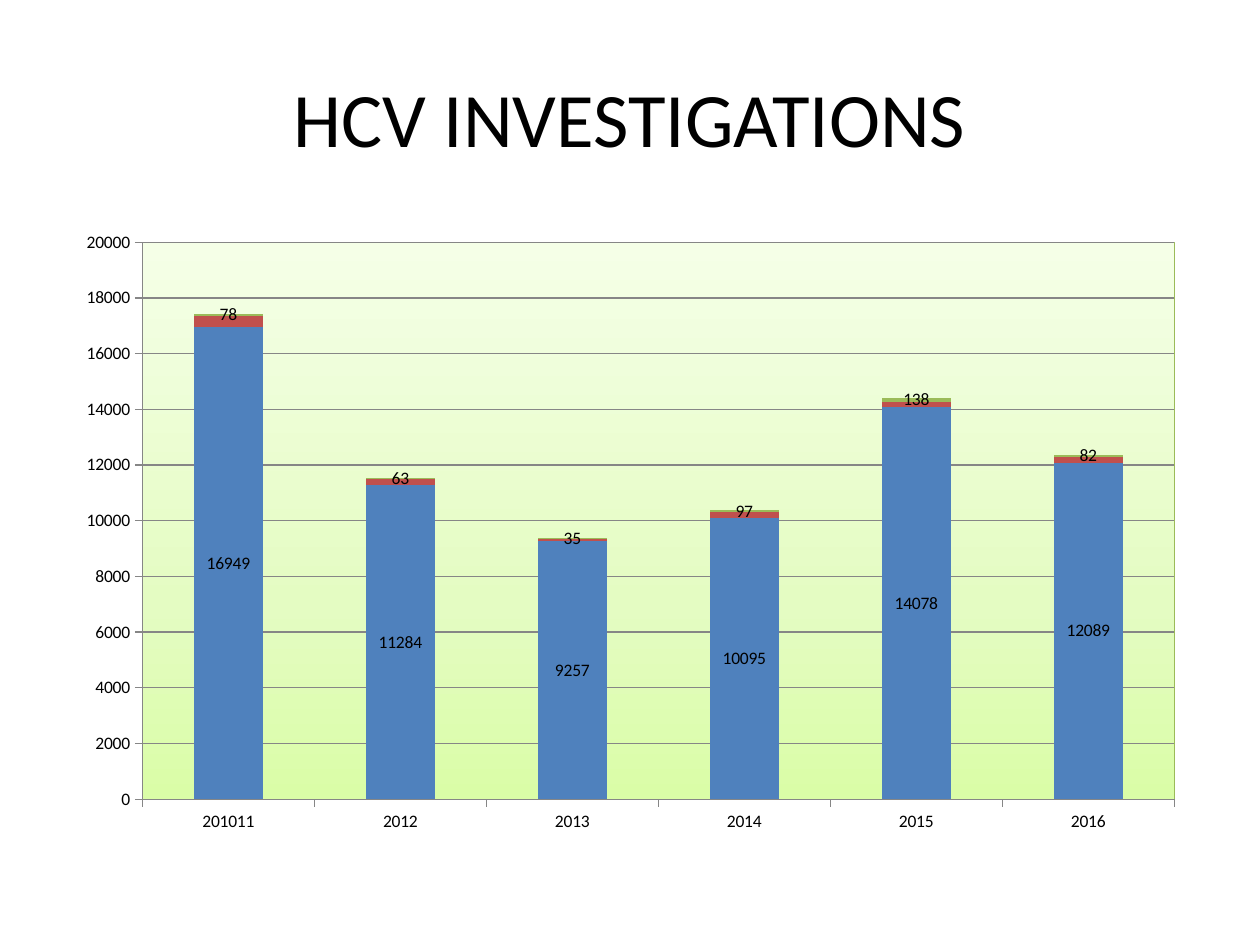
import pptx
import pptx.chart.data
import pptx.dml.color
import pptx.enum.chart
import pptx.enum.text
import pptx.oxml
import pptx.oxml.ns
import pptx.util

Inches = pptx.util.Inches
Pt = pptx.util.Pt
FONT = "Calibri"
COLORS = {"text": "000000", "axis": "868686", "plot_line": "9BBB59"}
TITLE = "HCV INVESTIGATIONS"
YEARS = ["201011", "2012", "2013", "2014", "2015", "2016"]
SERIES = [
    ("Series 1", [16949, 11284, 9257, 10095, 14078, 12089], "4F81BD", True),
    ("Series 2", [400, 200, 100, 200, 200, 200], "C0504D", False),
    ("Series 3", [78, 63, 35, 97, 138, 82], "9BBB59", True),
]
PLOT_GRADIENT = [(0, "DAFDA7"), (35, "E4FCC2"), (100, "F5FFE7")]
PLOT_LAYOUT = {"x": 0.07, "y": 0.035, "w": 0.91, "h": 0.893}


def rgb(value):
    return pptx.dml.color.RGBColor.from_string(value)


def style_font(font, size):
    font.name = FONT
    font.size = Pt(size)
    font.color.rgb = rgb(COLORS["text"])


def style_line(line):
    line.color.rgb = rgb(COLORS["axis"])
    line.width = Pt(0.75)


def add_title(s):
    title = s.shapes.title
    title.left, title.top = Inches(0.5), Inches(0.3)
    title.width, title.height = Inches(9), Inches(1.25)
    tf = title.text_frame
    tf.vertical_anchor = pptx.enum.text.MSO_ANCHOR.MIDDLE
    p = tf.paragraphs[0]
    p.alignment = pptx.enum.text.PP_ALIGN.CENTER
    r = p.add_run()
    r.text = TITLE
    style_font(r.font, 44)


def style_plot_area(chart):
    qn = pptx.oxml.ns.qn
    ns = pptx.oxml.ns.nsdecls("c", "a")
    area = chart.plots[0]._element.getparent()
    for old in area.findall(qn("c:layout")):
        area.remove(old)
    edges = "".join(f'<c:{k} val="{v}"/>' for k, v in PLOT_LAYOUT.items())
    area.insert(0, pptx.oxml.parse_xml(
        f'<c:layout {ns}><c:manualLayout><c:layoutTarget val="inner"/>'
        f'<c:xMode val="edge"/><c:yMode val="edge"/>{edges}'
        '</c:manualLayout></c:layout>'))
    stops = "".join(
        f'<a:gs pos="{pos * 1000}"><a:srgbClr val="{color}"/></a:gs>'
        for pos, color in PLOT_GRADIENT)
    area.append(pptx.oxml.parse_xml(
        f'<c:spPr {ns}><a:gradFill><a:gsLst>{stops}</a:gsLst>'
        '<a:lin ang="16200000" scaled="1"/></a:gradFill><a:ln w="9525">'
        f'<a:solidFill><a:srgbClr val="{COLORS["plot_line"]}"/></a:solidFill>'
        '</a:ln></c:spPr>'))


def add_chart(s):
    data = pptx.chart.data.CategoryChartData()
    data.categories = YEARS
    for name, values, _, _ in SERIES:
        data.add_series(name, values)
    chart = s.shapes.add_chart(
        pptx.enum.chart.XL_CHART_TYPE.COLUMN_STACKED,
        Inches(0.5), Inches(1.75), Inches(9), Inches(4.95), data).chart
    chart.has_legend = False
    chart.has_title = False
    style_font(chart.font, 10)

    plot = chart.plots[0]
    plot.gap_width = 150
    plot.overlap = 100
    plot.vary_by_categories = False
    for series, (_, _, color, labelled) in zip(plot.series, SERIES):
        series.format.fill.solid()
        series.format.fill.fore_color.rgb = rgb(color)
        if labelled:
            series.data_labels.show_value = True
            style_font(series.data_labels.font, 10)

    for axis in (chart.category_axis, chart.value_axis):
        axis.major_tick_mark = pptx.enum.chart.XL_TICK_MARK.OUTSIDE
        axis.minor_tick_mark = pptx.enum.chart.XL_TICK_MARK.NONE
        style_line(axis.format.line)
    value_axis = chart.value_axis
    value_axis.minimum_scale, value_axis.maximum_scale = 0, 20000
    value_axis.major_unit = 2000
    value_axis.has_major_gridlines = True
    style_line(value_axis.major_gridlines.format.line)
    style_plot_area(chart)


def main():
    prs = pptx.Presentation()
    prs.slide_width, prs.slide_height = Inches(10), Inches(7.5)
    s = prs.slides.add_slide(prs.slide_layouts[5])
    add_title(s)
    add_chart(s)
    prs.save("out.pptx")


if __name__ == "__main__":
    main()
